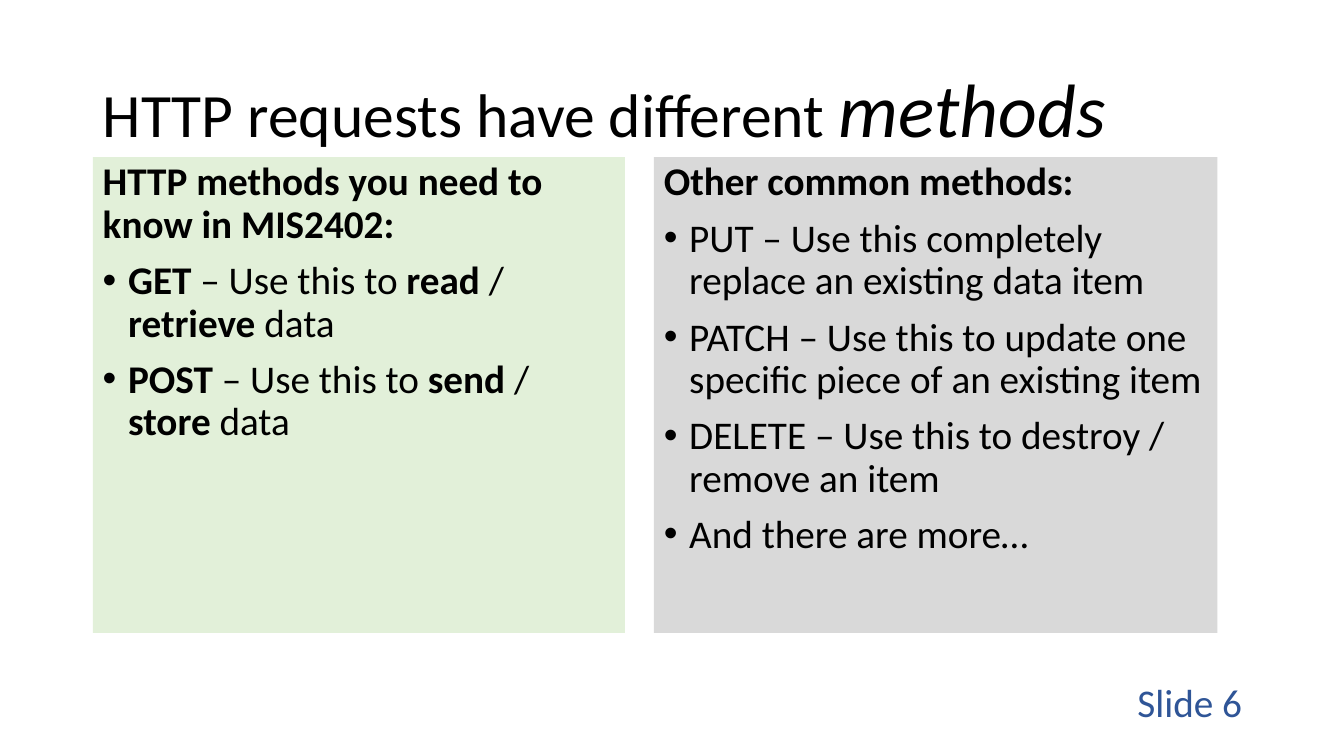
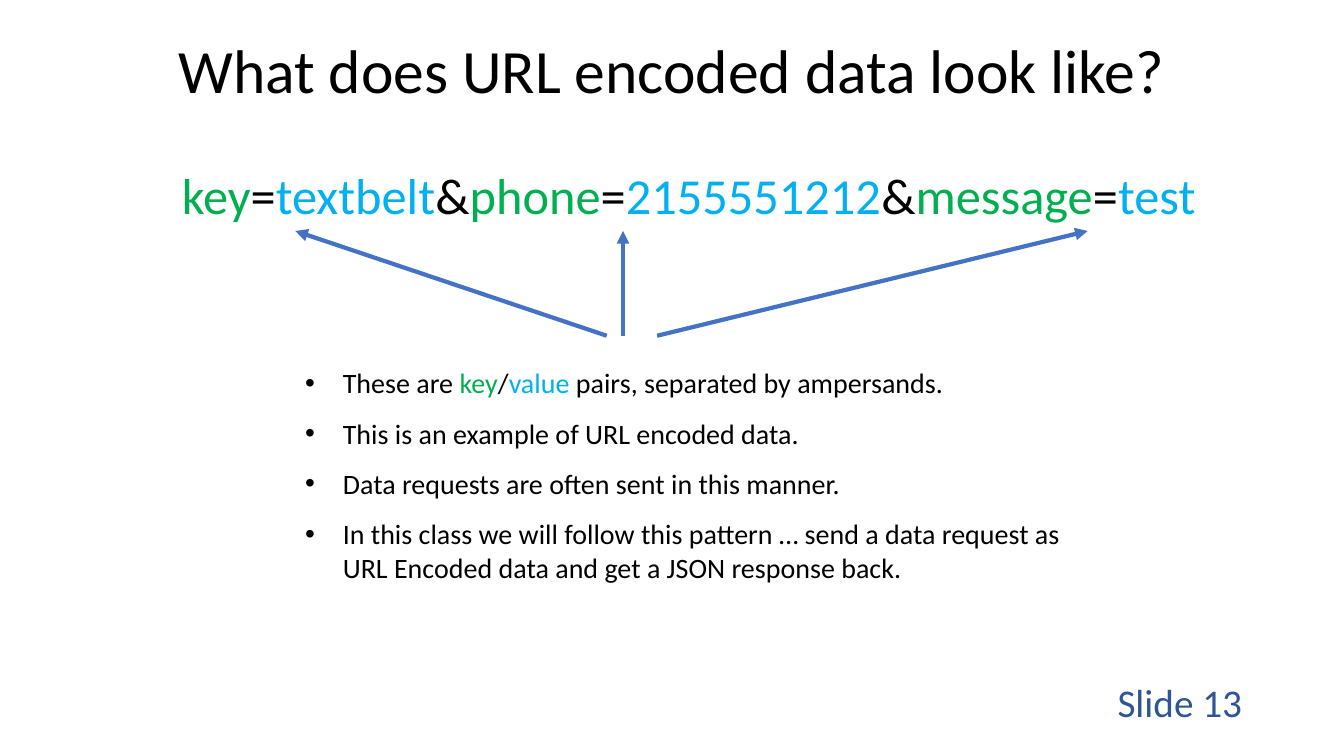
import pptx
import pptx.dml.color
import pptx.enum.shapes
import pptx.enum.text
import pptx.util
from lxml import etree
from pptx.oxml.ns import qn

Cm = pptx.util.Cm
RGBColor = pptx.dml.color.RGBColor
ALIGN = pptx.enum.text.PP_ALIGN
ANCHOR = pptx.enum.text.MSO_ANCHOR

FONT = "Calibri"
BLACK = RGBColor(0x00, 0x00, 0x00)
KEY_GREEN = RGBColor(0x00, 0xB0, 0x50)
VALUE_BLUE = RGBColor(0x00, 0xB0, 0xF0)
ARROW_BLUE = RGBColor(0x44, 0x72, 0xC4)
FOOTER_BLUE = RGBColor(0x2F, 0x55, 0x97)
PALE_GREEN = RGBColor(0xE2, 0xF0, 0xD9)
PALE_GRAY = RGBColor(0xD9, 0xD9, 0xD9)

# Span formats; a paragraph is a list of (text, format) spans.
PLAIN = {}
BOLD = {"bold": True}
KEY = {"color": KEY_GREEN}
VALUE = {"color": VALUE_BLUE}

METHODS_TITLE = [("HTTP requests have different ", PLAIN),
                 ("methods", {"size": 54, "italic": True})]
METHOD_CARDS = [
    {"left": 2.34, "width": 13.41, "fill": PALE_GREEN,
     "heading": "HTTP methods you need to know in MIS2402:",
     "bullets": [
         [("GET ", BOLD), ("– Use this to ", PLAIN), ("read", BOLD),
          (" / ", PLAIN), ("retrieve", BOLD), (" data", PLAIN)],
         [("POST ", BOLD), ("– Use this to ", PLAIN), ("send", BOLD),
          (" / ", PLAIN), ("store", BOLD), (" data", PLAIN)],
     ]},
    {"left": 16.48, "width": 14.2, "fill": PALE_GRAY,
     "heading": "Other common methods:",
     "bullets": [
         [("PUT – Use this completely replace an existing data item", PLAIN)],
         [("PATCH – Use this to update one specific piece of an existing item", PLAIN)],
         [("DELETE – Use this to destroy / remove an item", PLAIN)],
         [("And there are more…", PLAIN)],
     ]},
]
CARD_TOP, CARD_HEIGHT = 3.96, 11.99

ENCODING_TITLE = [("What does URL encoded data look like?", PLAIN)]
QUERY_PAIRS = [("key", "textbelt"), ("phone", "2155551212"), ("message", "test")]
ENCODING_NOTES = [
    [("These are ", PLAIN), ("key", KEY), ("/", PLAIN), ("value", VALUE),
     (" pairs, separated by ampersands.", PLAIN)],
    [("This is an example of URL encoded data.", PLAIN)],
    [("Data requests are often sent in this manner.", PLAIN)],
    [("In this class we will follow this pattern … send a data request as "
      "URL Encoded data and get a JSON response back.", PLAIN)],
]
ARROW_START_Y, ARROW_END_Y = 8.46, 5.82
ARROW_XS = [(15.29, 7.44), (15.7, 15.7), (16.56, 27.41)]


def add_bullet(para, indent):
    properties = para._p.get_or_add_pPr()
    properties.set("marL", str(Cm(indent)))
    properties.set("indent", str(-Cm(indent)))
    etree.SubElement(properties, qn("a:buFont")).set("typeface", "Arial")
    etree.SubElement(properties, qn("a:buChar")).set("char", "•")


def write_text(box, paragraphs, size, color=BLACK, align=ALIGN.LEFT,
               anchor=ANCHOR.TOP, line_spacing=1.0, before=0, after=0,
               indent=0, first_bullet=0):
    """Fill box with paragraphs; those from first_bullet on get bullets if indent is set."""
    frame = box.text_frame
    frame.word_wrap = True
    frame.vertical_anchor = anchor
    for index, spans in enumerate(paragraphs):
        para = frame.add_paragraph() if index else frame.paragraphs[0]
        if indent and index >= first_bullet:
            add_bullet(para, indent)
        para.alignment = align
        para.line_spacing = line_spacing
        para.space_before = pptx.util.Pt(before if index else 0)
        para.space_after = pptx.util.Pt(after)
        for text, style in spans:
            span = para.add_run()
            span.text = text
            span.font.name = FONT
            span.font.size = pptx.util.Pt(style.get("size", size))
            span.font.bold = style.get("bold", False)
            span.font.italic = style.get("italic", False)
            span.font.color.rgb = style.get("color", color)


def add_text(page, place, paragraphs, size, **text_format):
    box = page.shapes.add_textbox(*map(Cm, place))
    write_text(box, paragraphs, size, **text_format)


def add_page(deck, number, title, title_place, title_align):
    """Add a blank page with the shared title style and the slide number."""
    page = deck.slides.add_slide(deck.slide_layouts[6])
    add_text(page, title_place, [title], 44, align=title_align,
             anchor=ANCHOR.MIDDLE, line_spacing=0.9)
    add_text(page, (23.93, 17.17, 7.62, 1.02), [[(f"Slide {number}", PLAIN)]], 28,
             color=FOOTER_BLUE, align=ALIGN.RIGHT, anchor=ANCHOR.MIDDLE)
    return page


def add_card(page, card):
    box = page.shapes.add_shape(
        pptx.enum.shapes.MSO_SHAPE.RECTANGLE,
        Cm(card["left"]), Cm(CARD_TOP), Cm(card["width"]), Cm(CARD_HEIGHT))
    box.shadow.inherit = False
    box.fill.solid()
    box.fill.fore_color.rgb = card["fill"]
    box.line.fill.background()
    write_text(box, [[(card["heading"], BOLD)]] + card["bullets"], 28,
               line_spacing=0.9, before=10, indent=0.64, first_bullet=1)


def add_arrow(page, start_x, end_x):
    arrow = page.shapes.add_connector(
        pptx.enum.shapes.MSO_CONNECTOR.STRAIGHT,
        Cm(start_x), Cm(ARROW_START_Y), Cm(end_x), Cm(ARROW_END_Y))
    arrow.line.color.rgb = ARROW_BLUE
    arrow.line.width = pptx.util.Pt(3)
    etree.SubElement(arrow.line._get_or_add_ln(), qn("a:tailEnd")).set("type", "triangle")
    etree.SubElement(arrow._element.spPr, qn("a:effectLst"))


def query_spans():
    spans = []
    for key, value in QUERY_PAIRS:
        if spans:
            spans.append(("&", PLAIN))
        spans += [(key, KEY), ("=", PLAIN), (value, VALUE)]
    return spans


def build_methods_page(deck):
    page = add_page(deck, 6, METHODS_TITLE, (2.34, 1.02, 29.21, 3.68), ALIGN.LEFT)
    for card in METHOD_CARDS:
        add_card(page, card)


def build_encoding_page(deck):
    page = add_page(deck, 13, ENCODING_TITLE, (0, 0.69, 33.87, 2.34), ALIGN.CENTER)
    add_text(page, (3.51, 4.01, 27.69, 1.8), [query_spans()], 36, align=ALIGN.CENTER)
    for start_x, end_x in ARROW_XS:
        add_arrow(page, start_x, end_x)
    add_text(page, (7.44, 9.09, 20.4, 5.82), ENCODING_NOTES, 20, after=12, indent=0.95)


def main():
    deck = pptx.Presentation()
    deck.slide_width, deck.slide_height = Cm(33.87), Cm(19.05)
    build_methods_page(deck)
    build_encoding_page(deck)
    deck.save("out.pptx")


if __name__ == "__main__":
    main()
